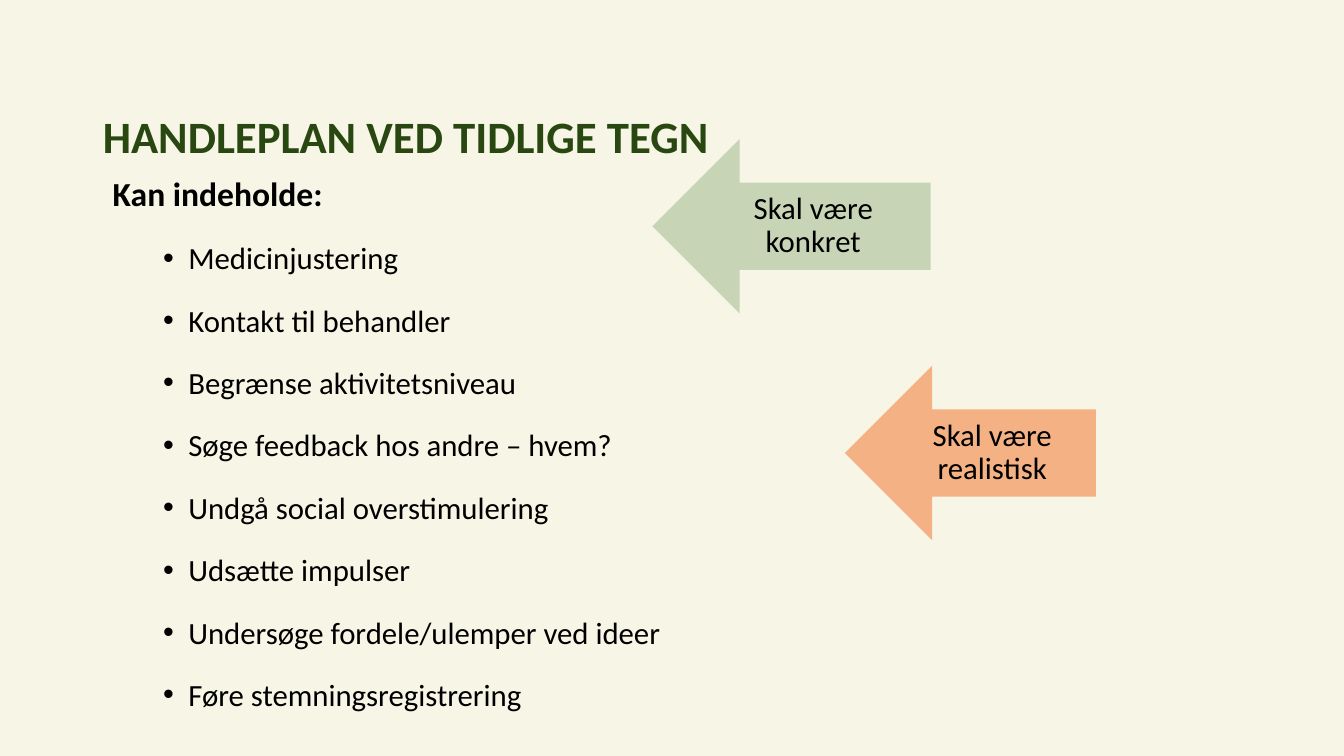
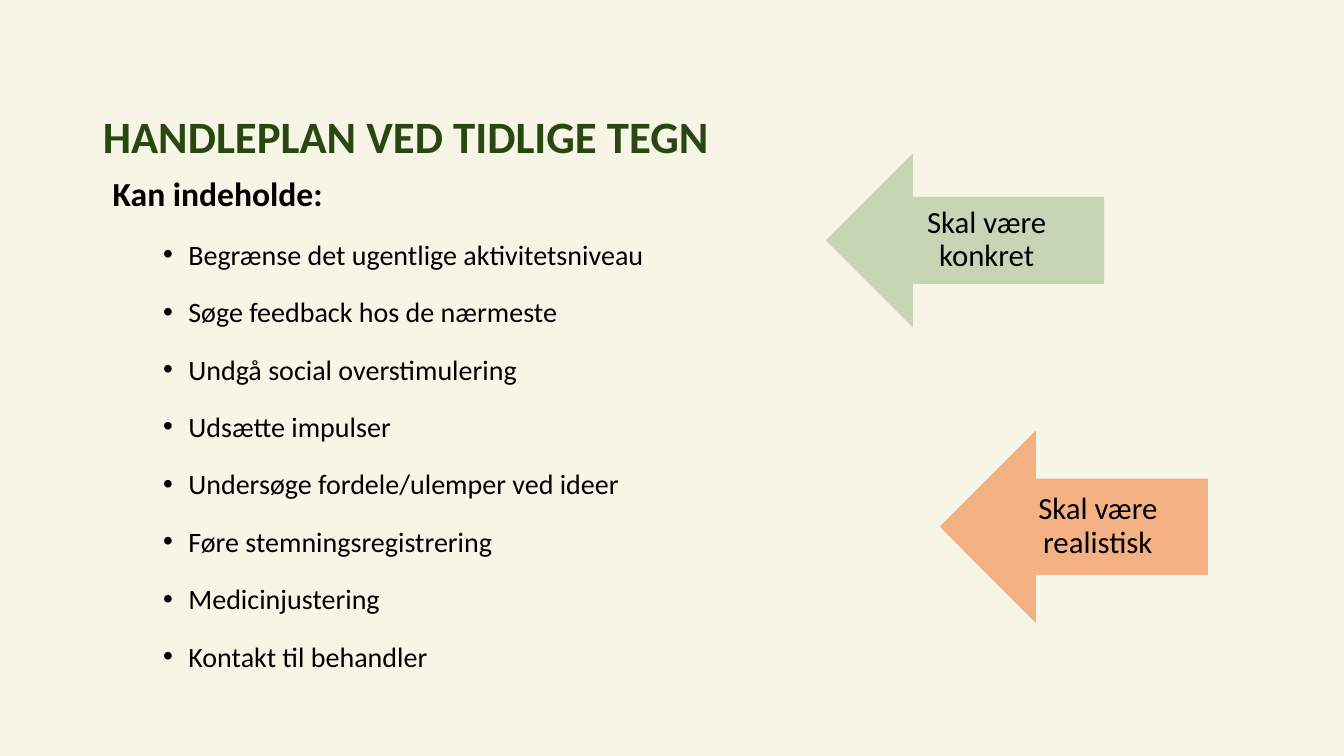
"""Build two slides on an action plan for early warning signs."""
from lxml import etree
from pptx import Presentation
from pptx.dml.color import RGBColor
from pptx.enum.shapes import MSO_SHAPE
from pptx.enum.text import MSO_ANCHOR as ANCHOR, MSO_AUTO_SIZE as AUTO, PP_ALIGN as ALIGN
from pptx.oxml.ns import qn
from pptx.util import Inches, Pt

CREAM = RGBColor(0xF7, 0xF6, 0xE6)
DARK_GREEN = RGBColor(0x29, 0x47, 0x11)
SAGE = RGBColor(0xC7, 0xD5, 0xB6)
ORANGE = RGBColor(0xF4, 0xB1, 0x83)
BLACK = RGBColor(0, 0, 0)
FONT = "Calibri"

TITLE = "HANDLEPLAN VED TIDLIGE TEGN"
LEAD = "Kan indeholde:"
TITLE_BOX = (0.92, 0.96, 11.5, 0.84)
BODY_BOX = (1.02, 1.71, 6.57, 5.54)

SLIDES = [
    {
        "size": 22,
        "bullets": [
            "Medicinjustering",
            "Kontakt til behandler",
            "Begrænse aktivitetsniveau",
            "Søge feedback hos andre – hvem?",
            "Undgå social overstimulering",
            "Udsætte impulser",
            "Undersøge fordele/ulemper ved ideer",
            "Føre stemningsregistrering",
        ],
        "arrows": [
            ("Skal være konkret", SAGE, (6.47, 1.38, 2.76, 1.73)),
            ("Skal være realistisk", ORANGE, (8.38, 3.63, 2.49, 1.73)),
        ],
    },
    {
        "size": 20,
        "bullets": [
            "Begrænse det ugentlige aktivitetsniveau",
            "Søge feedback hos de nærmeste",
            "Undgå social overstimulering",
            "Udsætte impulser",
            "Undersøge fordele/ulemper ved ideer",
            "Føre stemningsregistrering",
            "Medicinjustering",
            "Kontakt til behandler",
        ],
        "arrows": [
            ("Skal være konkret", SAGE, (8.19, 1.52, 2.76, 1.73)),
            ("Skal være realistisk", ORANGE, (9.32, 4.27, 2.66, 1.91)),
        ],
    },
]


def inches(box):
    return [Inches(v) for v in box]


def write(p, text, size=22, color=BLACK, bold=False, align=ALIGN.LEFT,
          spacing=0.9, before=0, bullet=False):
    if bullet:
        pPr = p._p.get_or_add_pPr()
        pPr.set("marL", str(Inches(0.75)))
        pPr.set("indent", str(Inches(-0.25)))
        etree.SubElement(pPr, qn("a:buFont")).set("typeface", "Arial")
        etree.SubElement(pPr, qn("a:buChar")).set("char", "•")
    p.alignment = align
    p.line_spacing = spacing
    p.space_before = Pt(before)
    r = p.add_run()
    r.text = text
    r.font.name = FONT
    r.font.size = Pt(size)
    r.font.bold = bold
    r.font.color.rgb = color


def add_title(s):
    sp = s.shapes.title
    sp.left, sp.top, sp.width, sp.height = inches(TITLE_BOX)
    tf = sp.text_frame
    tf.auto_size = AUTO.NONE
    tf.vertical_anchor = ANCHOR.MIDDLE
    write(tf.paragraphs[0], TITLE, size=32, color=DARK_GREEN, bold=True)


def add_body(s, bullets, size):
    tf = s.shapes.add_textbox(*inches(BODY_BOX)).text_frame
    tf.word_wrap = True
    write(tf.paragraphs[0], LEAD, size=24, bold=True)
    for text in bullets:
        write(tf.add_paragraph(), text, size=size, spacing=1.5, before=5, bullet=True)


def add_arrow(s, text, color, box):
    sp = s.shapes.add_shape(MSO_SHAPE.LEFT_ARROW, *inches(box))
    sp.shadow.inherit = False
    sp.fill.solid()
    sp.fill.fore_color.rgb = color
    sp.line.fill.background()
    tf = sp.text_frame
    tf.word_wrap = True
    tf.vertical_anchor = ANCHOR.MIDDLE
    write(tf.paragraphs[0], text, align=ALIGN.CENTER)


def main():
    prs = Presentation()
    prs.slide_width, prs.slide_height = Inches(13.33), Inches(7.5)
    fill = prs.slide_master.background.fill
    fill.solid()
    fill.fore_color.rgb = CREAM
    for data in SLIDES:
        s = prs.slides.add_slide(prs.slide_layouts[5])
        add_title(s)
        add_body(s, data["bullets"], data["size"])
        for arrow in data["arrows"]:
            add_arrow(s, *arrow)
    prs.save("out.pptx")


if __name__ == "__main__":
    main()
